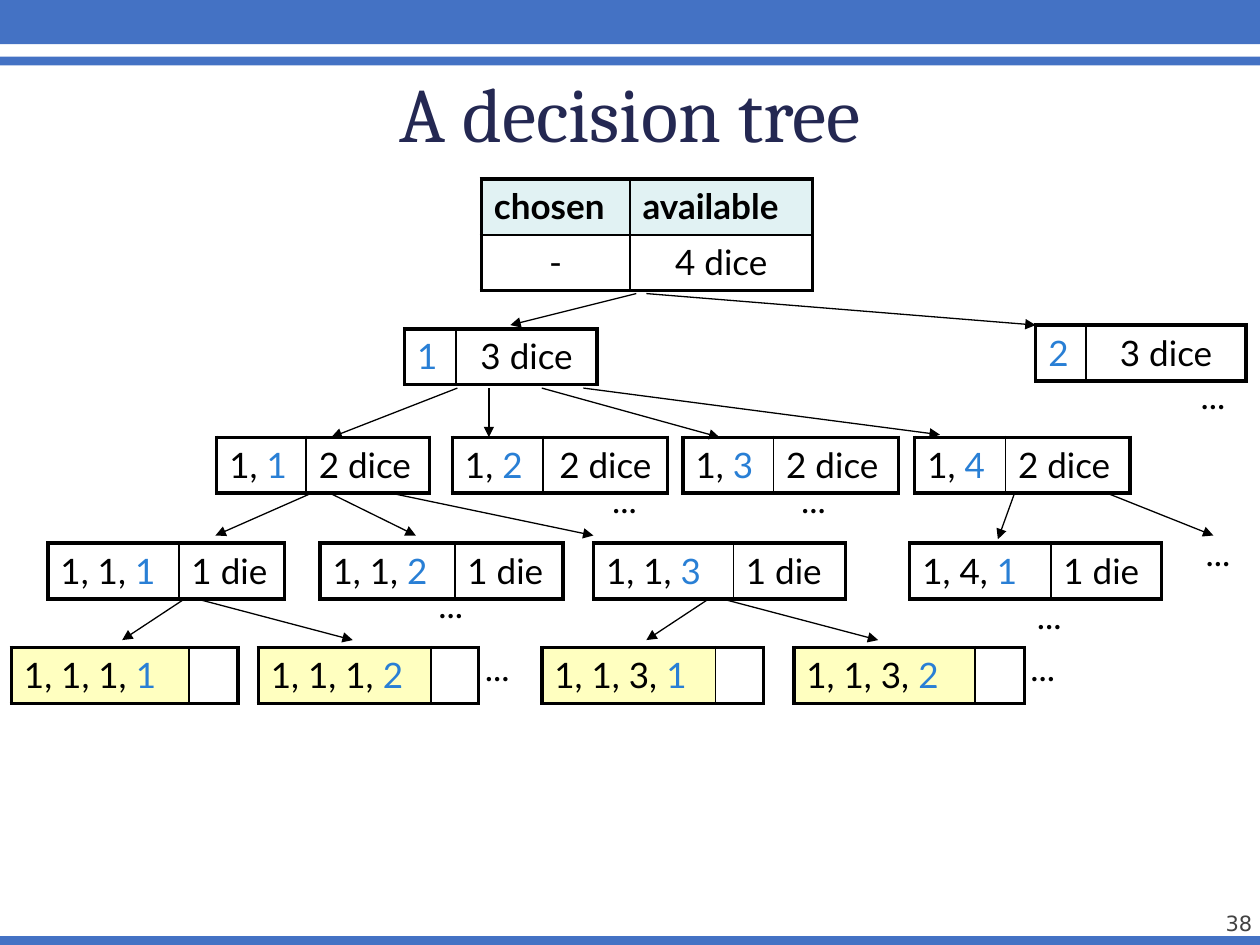
from dataclasses import dataclass

from lxml import etree
from pptx import Presentation
from pptx.dml.color import RGBColor
from pptx.enum.shapes import MSO_CONNECTOR, MSO_SHAPE
from pptx.enum.text import MSO_ANCHOR, MSO_AUTO_SIZE, PP_ALIGN
from pptx.oxml.ns import qn
from pptx.util import Inches, Pt

LEFT, CENTER, RIGHT = PP_ALIGN.LEFT, PP_ALIGN.CENTER, PP_ALIGN.RIGHT
BOTTOM = MSO_ANCHOR.BOTTOM
NO_FIT, GROW = MSO_AUTO_SIZE.NONE, MSO_AUTO_SIZE.SHAPE_TO_FIT_TEXT
RECTANGLE = MSO_SHAPE.RECTANGLE
STRAIGHT = MSO_CONNECTOR.STRAIGHT
TITLE_ONLY = 5
COLUMNS, ROWS = 100, 75


@dataclass(frozen=True)
class Theme:
    bar: str = "4472C4"
    title: str = "242852"
    ink: str = "000000"
    choice: str = "297FD5"
    header: str = "E1F2F3"
    complete: str = "FFFFC0"
    number: str = "424242"
    title_font: str = "Cambria"
    body_font: str = "Lato"
    number_font: str = "DejaVu Sans"
    title_size: float = 44
    body_size: float = 20
    number_size: float = 12
    outer_line: float = 2.25
    inner_line: float = 1
    arrow_line: float = 0.75


THEME = Theme()


def add_text(paragraph, text, *, font=THEME.body_font, size=THEME.body_size,
             color=THEME.ink, bold=False, align=LEFT):
    """Append one formatted run to the paragraph."""
    paragraph.alignment = align
    run = paragraph.add_run()
    run.text = text
    run.font.name, run.font.size, run.font.bold = font, Pt(size), bold
    run.font.color.rgb = RGBColor.from_string(color)


def set_borders(cell, widths):
    """Draw the left, right, top and bottom borders, with widths in points."""
    properties = cell._tc.get_or_add_tcPr()
    for index, (side, width) in enumerate(zip("LRTB", widths)):
        line = etree.Element(qn(f"a:ln{side}"), w=str(Pt(width)))
        fill = etree.SubElement(line, qn("a:solidFill"))
        etree.SubElement(fill, qn("a:srgbClr"), val=THEME.ink)
        properties.insert(index, line)


class TreeSlide:
    """Places elements by columns and rows of the slide's grid."""

    def __init__(self, deck, theme):
        self.theme = theme
        self.column = deck.slide_width / COLUMNS
        self.row = deck.slide_height / ROWS
        self.slide = deck.slides.add_slide(deck.slide_layouts[TITLE_ONLY])
        self.shapes = self.slide.shapes

    def grid(self, *lengths):
        """Turn alternating columns and rows into slide lengths."""
        return [round(length * (self.row if index % 2 else self.column))
                for index, length in enumerate(lengths)]

    def bar(self, top, height):
        band = self.shapes.add_shape(RECTANGLE, *self.grid(0, top, COLUMNS, height))
        band.shadow.inherit = False
        band.fill.solid()
        band.fill.fore_color.rgb = RGBColor.from_string(self.theme.bar)
        band.line.fill.background()

    def title(self, text, *box):
        heading = self.shapes.title
        heading.left, heading.top, heading.width, heading.height = self.grid(*box)
        frame = heading.text_frame
        frame.auto_size, frame.vertical_anchor = NO_FIT, BOTTOM
        frame.margin_left = frame.margin_right = frame.margin_bottom = 0
        frame.margin_top = Inches(0.05)
        add_text(frame.paragraphs[0], text, font=self.theme.title_font,
                 size=self.theme.title_size, color=self.theme.title, align=CENTER)

    def page_number(self, text, *box):
        frame = self.shapes.add_textbox(*self.grid(*box)).text_frame
        frame.word_wrap, frame.vertical_anchor = True, BOTTOM
        frame.margin_left = frame.margin_right = 0
        frame.margin_top = frame.margin_bottom = 0
        add_text(frame.paragraphs[0], text, font=self.theme.number_font,
                 size=self.theme.number_size, color=self.theme.number, align=RIGHT)

    def ellipsis(self, left, top):
        frame = self.shapes.add_textbox(*self.grid(left, top, 4.5, 4.3)).text_frame
        frame.word_wrap, frame.auto_size = False, GROW
        add_text(frame.paragraphs[0], "...")

    def arrow(self, *ends):
        branch = self.shapes.add_connector(STRAIGHT, *self.grid(*ends))
        branch.line.width = Pt(self.theme.arrow_line)
        branch.line.color.rgb = RGBColor.from_string(self.theme.ink)
        etree.SubElement(branch.line._get_or_add_ln(), qn("a:tailEnd"), type="triangle")
        etree.SubElement(branch._element.spPr, qn("a:effectLst"))

    def table(self, left, top, widths, rows):
        """Each cell is (fill or None, alignment, [(text, format), ...])."""
        box = self.grid(left, top, sum(widths), 4.44 * len(rows))
        table = self.shapes.add_table(len(rows), len(widths), *box).table
        table.first_row = table.horz_banding = False
        for column, width in zip(table.columns, widths):
            column.width = round(width * self.column)
        outer, inner = self.theme.outer_line, self.theme.inner_line
        for r, row in enumerate(rows):
            for c, (fill, align, runs) in enumerate(row):
                cell = table.cell(r, c)
                if fill:
                    cell.fill.solid()
                    cell.fill.fore_color.rgb = RGBColor.from_string(fill)
                else:
                    cell.fill.background()
                edges = (c == 0, c == len(row) - 1, r == 0, r == len(rows) - 1)
                set_borders(cell, [outer if edge else inner for edge in edges])
                for text, style in runs:
                    add_text(cell.text_frame.paragraphs[0], text, align=align, **style)

    def node(self, left, top, widths, earlier, choice, available, align=LEFT):
        runs = [(earlier, {})] if earlier else []
        runs.append((choice, {"color": self.theme.choice}))
        rest = [(available, {})] if available else []
        fill = None if available else self.theme.complete
        self.table(left, top, widths, [[(fill, LEFT, runs), (None, align, rest)]])


TWO_LEFT, ONE_LEFT, NONE_LEFT = 34.7, 43.1, 51.4
NODES = [
    (32.1, 26.1, (4.1, 11.2), "", "1", "3 dice", CENTER),
    (82.2, 25.8, (4, 12.7), "", "2", "3 dice", CENTER),
    (17.2, TWO_LEFT, (7.1, 9.8), "1, ", "1", "2 dice"),
    (35.9, TWO_LEFT, (7.2, 9.9), "1, ", "2", "2 dice", CENTER),
    (54.2, TWO_LEFT, (7.2, 9.9), "1, ", "3", "2 dice"),
    (72.6, TWO_LEFT, (7.2, 9.9), "1, ", "4", "2 dice"),
    (3.8, ONE_LEFT, (10.4, 8.4), "1, 1, ", "1", "1 die"),
    (25.4, ONE_LEFT, (10.7, 8.6), "1, 1, ", "2", "1 die"),
    (47.1, ONE_LEFT, (11.1, 8.9), "1, 1, ", "3", "1 die"),
    (72.2, ONE_LEFT, (11.2, 8.8), "1, 4, ", "1", "1 die"),
    (0.9, NONE_LEFT, (14.1, 3.9), "1, 1, 1, ", "1", ""),
    (20.5, NONE_LEFT, (13.7, 3.8), "1, 1, 1, ", "2", ""),
    (43, NONE_LEFT, (13.8, 3.8), "1, 1, 3, ", "1", ""),
    (63, NONE_LEFT, (14.4, 3.9), "1, 1, 3, ", "2", ""),
]
# Start row of a level's branches: (start column, end column, end row)
BRANCHES = {
    23.3: [(50.5, 40.5, 25.8), (51.3, 82.2, 25.8)],
    30.8: [(36.3, 26.3, 34.7), (38.8, 38.8, 34.7), (43, 57.1, 34.7), (46.3, 74.6, 34.5)],
    39.2: [(24.6, 17.1, 42.5), (26.3, 33, 42.5), (31.3, 47.1, 42.5),
           (80.5, 79.2, 42.8), (88, 96.3, 42.5)],
    47.5: [(14.7, 9.7, 50.8), (15.5, 28, 50.8), (56.3, 51.3, 50.8), (57.2, 69.7, 50.8)],
}
ELLIPSES = [(94.7, 41.7), (62.6, 37.5), (47.6, 37.5), (94.3, 29.2),
            (33.8, 45.8), (81.3, 46.7), (37.5, 50.8), (80.8, 50.8)]


def main():
    deck = Presentation()
    deck.slide_width, deck.slide_height = Inches(10), Inches(7.5)
    tree = TreeSlide(deck, THEME)
    for top, height in [(0, 3.5), (4.5, 0.7), (74.3, 0.7)]:
        tree.bar(top, height)
    tree.page_number("38", 91.1, 70.3, 8.3, 4)
    tree.title("A decision tree", 5, 4.8, 90, 7.7)

    header = [(THEME.header, LEFT, [(label, {"bold": True})])
              for label in ("chosen", "available")]
    start = [(None, CENTER, [(value, {})]) for value in ("-", "4 dice")]
    tree.table(38.2, 14.2, (11.8, 14.5), [header, start])
    for node in NODES:
        tree.node(*node)
    for start_row, ends in BRANCHES.items():
        for start_column, end_column, end_row in ends:
            tree.arrow(start_column, start_row, end_column, end_row)
    for place in ELLIPSES:
        tree.ellipsis(*place)
    deck.save("out.pptx")


if __name__ == "__main__":
    main()
